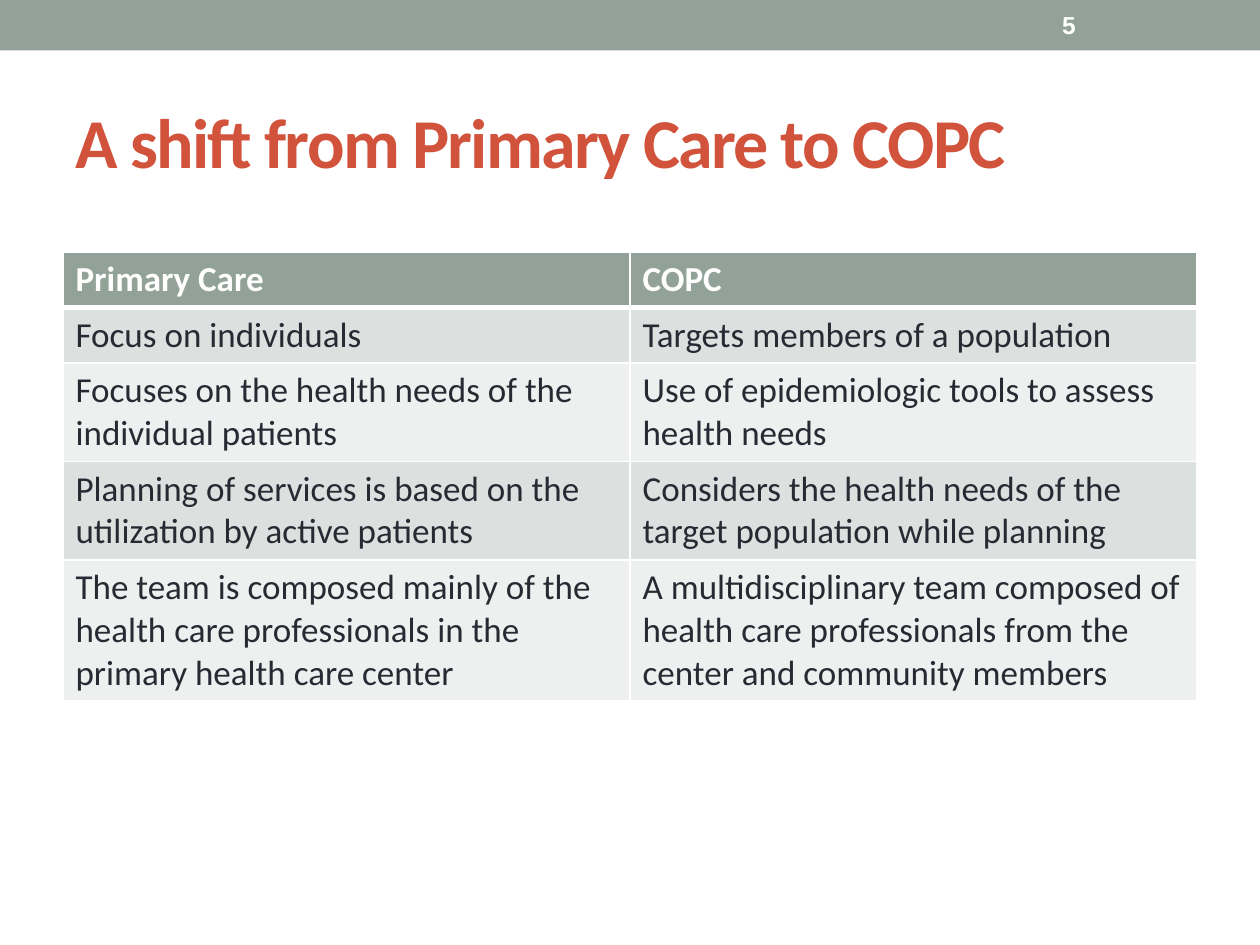
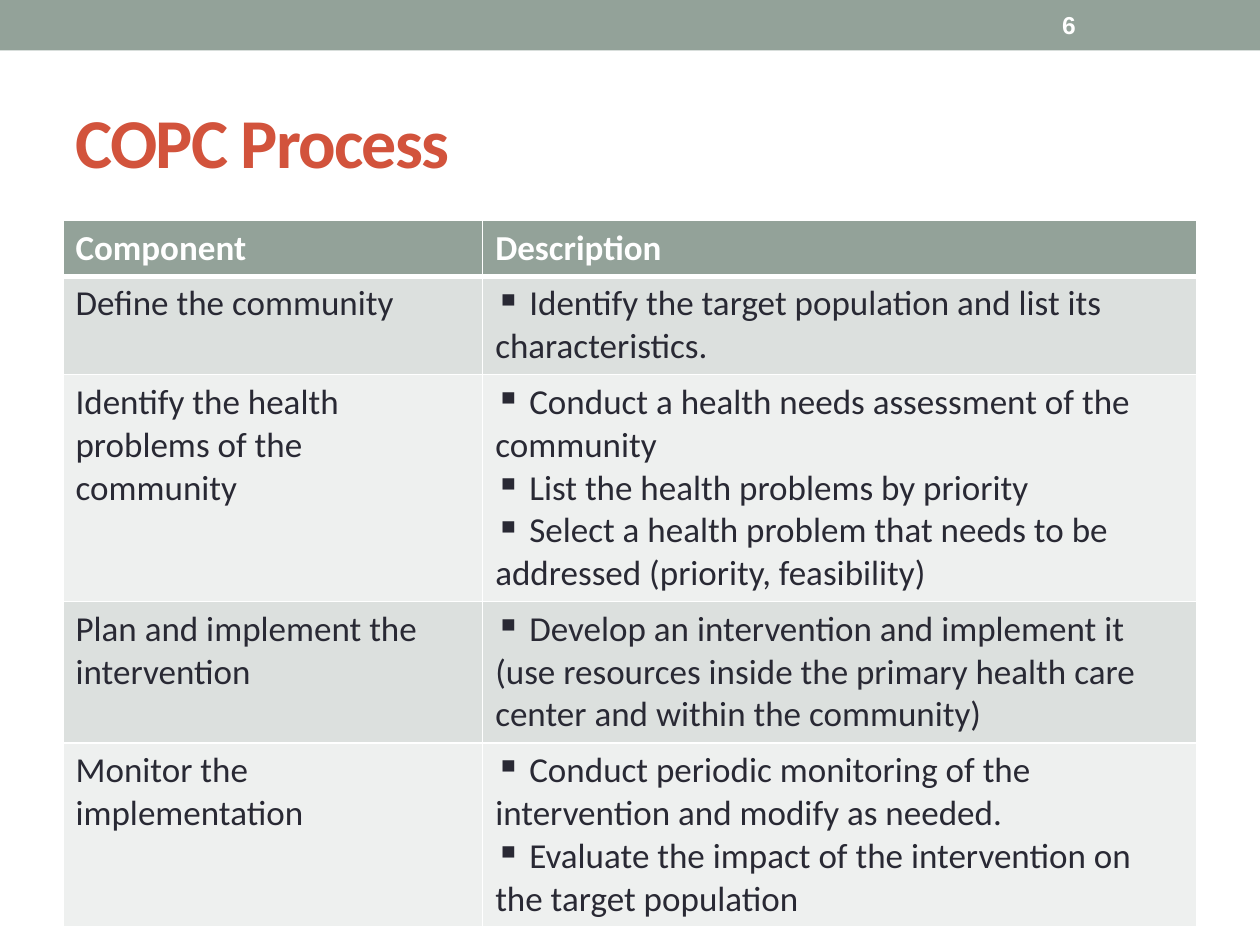
from lxml.etree import SubElement
from pptx import Presentation
from pptx.dml.color import RGBColor
from pptx.enum.shapes import MSO_SHAPE as Shape
from pptx.enum.text import MSO_ANCHOR as Anchor, PP_ALIGN as Align
from pptx.oxml.ns import qn
from pptx.util import Cm, Pt

# Shared look
SAGE = RGBColor(0x93, 0xA2, 0x99)
RED = RGBColor(0xD2, 0x53, 0x3C)
INK = RGBColor(0x29, 0x29, 0x34)
WHITE = RGBColor(0xFF, 0xFF, 0xFF)
ROW_FILLS = (RGBColor(0xDC, 0xE0, 0xDE), RGBColor(0xEE, 0xF0, 0xEF))

SLIDE_WIDTH, SLIDE_HEIGHT = Cm(25.4), Cm(19.05)
MARGIN = Cm(1.27)
BULLET = "▪"
TITLE_ONLY = 5

# Each row: lines of text it holds, left cell, right cell (a list is bulleted)
SHIFT_ROWS = [
    (1, "Primary Care", "COPC"),
    (1, "Focus on individuals", "Targets members of a population"),
    (2, "Focuses on the health needs of the individual patients",
     "Use of epidemiologic tools to assess health needs"),
    (2, "Planning of services is based on the utilization by active patients",
     "Considers the health needs of the target population while planning"),
    (3, "The team is composed mainly of the health care professionals in the "
        "primary health care center",
     "A multidisciplinary team composed of health care professionals from the "
     "center and community members"),
]
PROCESS_ROWS = [
    (1, "Component", "Description"),
    (2, "Define the community",
     ["Identify the target population and list its characteristics."]),
    (5, "Identify the health problems of the community",
     ["Conduct a health needs assessment of the community",
      "List the health problems by priority",
      "Select a health problem that needs to be addressed (priority, feasibility)"]),
    (3, "Plan and implement the intervention",
     ["Develop an intervention and implement it (use resources inside the "
      "primary health care center and within the community)"]),
    (4, "Monitor the implementation",
     ["Conduct periodic monitoring of the intervention and modify as needed.",
      "Evaluate the impact of the intervention on the target population"]),
]


def write_text(paragraph, text, size=20, font="Calibri", color=INK, bold=False,
               spacing=None):
    """Add one formatted run; spacing is in hundredths of a point."""
    paragraph.alignment = Align.LEFT
    run = paragraph.add_run()
    run.text = text
    run.font.size = Pt(size)
    run.font.name = font
    run.font.bold = bold
    run.font.color.rgb = color
    if spacing is not None:
        run.font._element.set("spc", str(spacing))


def add_bullet(paragraph):
    properties = paragraph._p.get_or_add_pPr()
    properties.set("marL", "0")
    properties.set("indent", "0")
    SubElement(properties, qn("a:buChar"), char=BULLET)


def add_band(slide):
    band = slide.shapes.add_shape(Shape.RECTANGLE, 0, 0, SLIDE_WIDTH, Cm(1.02))
    band.shadow.inherit = False
    band.fill.solid()
    band.fill.fore_color.rgb = SAGE
    band.line.fill.background()


def add_number(slide, number):
    box = slide.shapes.add_textbox(Cm(21.16), Cm(0.05), Cm(2.97), Cm(0.91))
    frame = box.text_frame
    frame.word_wrap = True
    frame.vertical_anchor = Anchor.MIDDLE
    write_text(frame.paragraphs[0], str(number), size=14, font="Arial",
               color=WHITE, bold=True)


def add_title(slide, text):
    title = slide.shapes.title
    title.left, title.top = MARGIN, Cm(1.47)
    title.width, title.height = SLIDE_WIDTH - 2 * MARGIN, Cm(2.74)
    title.text_frame.vertical_anchor = Anchor.MIDDLE
    write_text(title.text_frame.paragraphs[0], text, size=40, color=RED,
               bold=True, spacing=-100)


def set_borders(cell, **widths):
    """Draw white borders; widths are points by side, in the order L, R, T, B."""
    properties = cell._tc.get_or_add_tcPr()
    for side, width in widths.items():
        line = SubElement(properties, qn(f"a:ln{side}"), w=str(Pt(width)))
        fill = SubElement(line, qn("a:solidFill"))
        SubElement(fill, qn("a:srgbClr"), val=str(WHITE))


def fill_cell(cell, content, row_index):
    header = row_index == 0
    set_borders(cell, L=1, R=1, T=3 if row_index == 1 else 1, B=3 if header else 1)
    cell.fill.solid()
    cell.fill.fore_color.rgb = SAGE if header else ROW_FILLS[(row_index - 1) % 2]
    bulleted = isinstance(content, list)
    frame = cell.text_frame
    for index, text in enumerate(content if bulleted else [content]):
        paragraph = frame.add_paragraph() if index else frame.paragraphs[0]
        write_text(paragraph, f" {text}" if bulleted else text,
                   color=WHITE if header else INK, bold=header)
        if bulleted:
            add_bullet(paragraph)


def add_text_table(slide, rows, top, column_widths):
    heights = [Cm(0.25 + 0.86 * lines) for lines, *_ in rows]
    table = slide.shapes.add_table(len(rows), len(column_widths), MARGIN, top,
                                   sum(column_widths), sum(heights)).table
    for column, width in zip(table.columns, column_widths):
        column.width = width
    for row_index, (_, *contents) in enumerate(rows):
        table.rows[row_index].height = heights[row_index]
        for column_index, content in enumerate(contents):
            fill_cell(table.cell(row_index, column_index), content, row_index)


def add_table_slide(presentation, number, title, rows, top, column_widths):
    slide = presentation.slides.add_slide(presentation.slide_layouts[TITLE_ONLY])
    add_band(slide)
    add_title(slide, title)
    add_text_table(slide, rows, top, column_widths)
    add_number(slide, number)


def main():
    presentation = Presentation()
    presentation.slide_width, presentation.slide_height = SLIDE_WIDTH, SLIDE_HEIGHT
    add_table_slide(presentation, 5, "A shift from Primary Care to COPC",
                    SHIFT_ROWS, Cm(5.08), (Cm(11.43), Cm(11.43)))
    add_table_slide(presentation, 6, "COPC Process",
                    PROCESS_ROWS, Cm(4.45), (Cm(8.46), Cm(14.4)))
    presentation.save("out.pptx")


if __name__ == "__main__":
    main()
